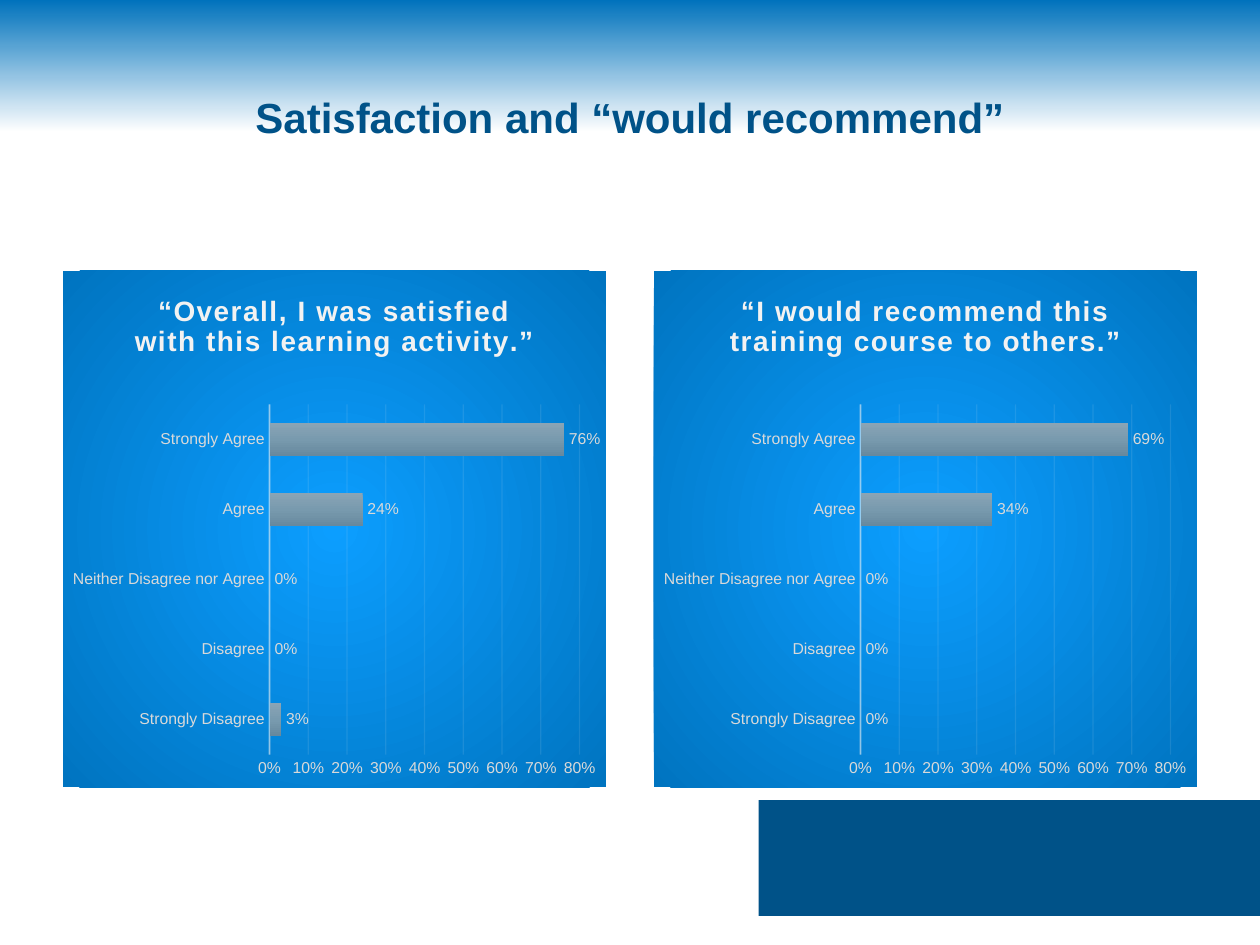
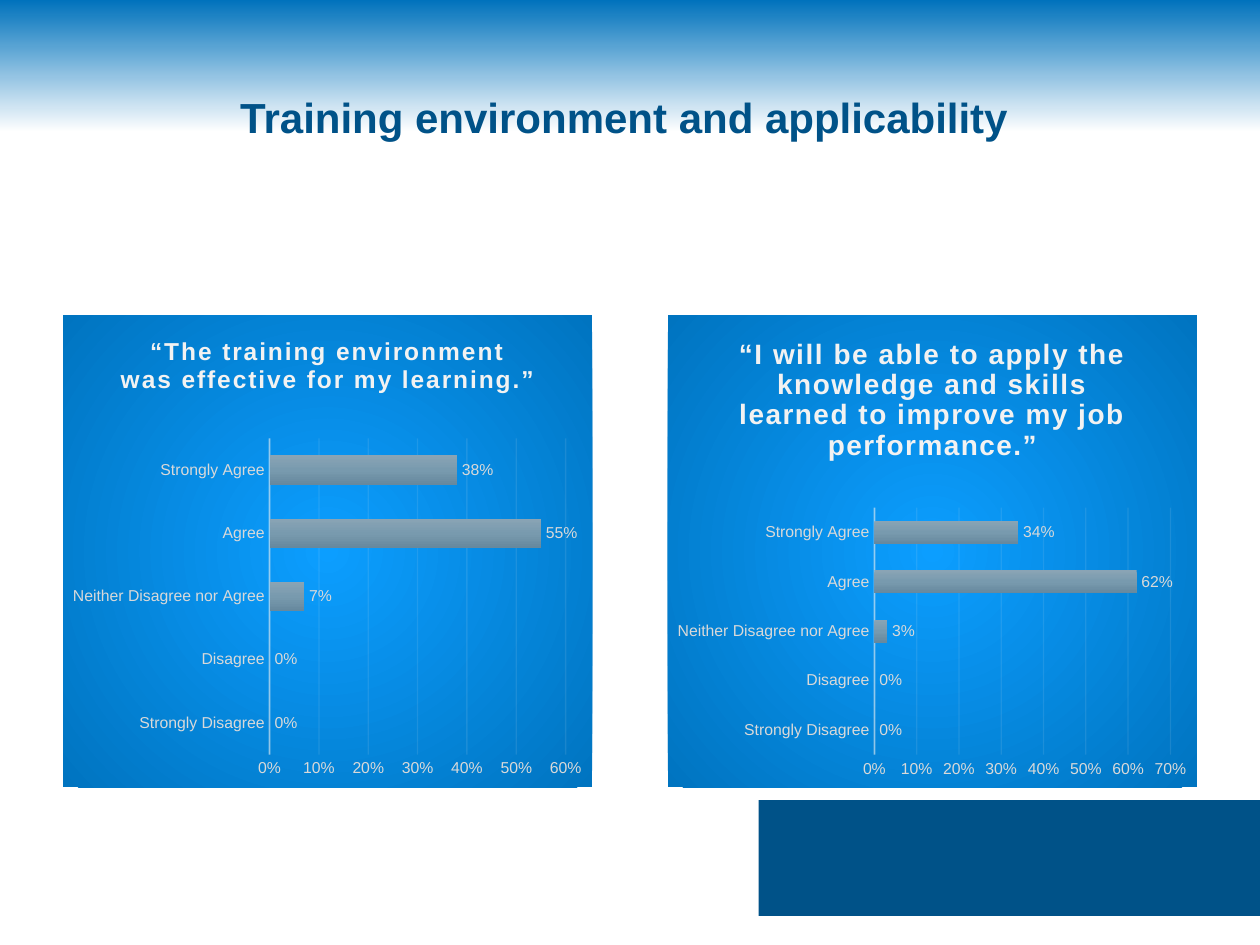
import pptx
import pptx.chart.data
import pptx.dml.color
import pptx.enum.chart
import pptx.enum.shapes
import pptx.enum.text
import pptx.oxml
import pptx.oxml.ns
import pptx.util

Inches = pptx.util.Inches
Pt = pptx.util.Pt
qn = pptx.oxml.ns.qn

COLORS = {
    "navy": "005288",
    "sky": "0072BC",
    "white": "FFFFFF",
    "label": "D9D9D9",
    "light": "F2F2F2",
    "panel_in": "0C9EFF",
    "panel_out": "0074C0",
    "bar_top": "8AA4B5",
    "bar_mid": "789AAE",
    "bar_end": "67899E",
}
FONT = "Arial"
ANSWERS = ["Strongly Disagree", "Disagree", "Neither Disagree nor Agree", "Agree", "Strongly Agree"]
MARGIN = 0.5
PLOT_LEFT, PLOT_RIGHT, PLOT_BOTTOM = 1.64, 0.21, 0.26
DOWN = '<a:lin ang="5400000" scaled="0"/>'
CENTER = '<a:path path="circle"><a:fillToRect l="50000" t="50000" r="50000" b="50000"/></a:path>'

SLIDES = [
    {
        "title": "Satisfaction and “would recommend”",
        "top": 2.15, "width": 4.31, "height": 4.1,
        "charts": [
            ("“Overall, I was satisfied with this learning activity.”", 16, 1.06, 0.8, [0.03, 0, 0, 0.24, 0.76]),
            ("“I would recommend this training course to others.”", 16, 1.06, 0.8, [0, 0, 0, 0.34, 0.69]),
        ],
    },
    {
        "title": "Training environment and applicability ",
        "top": 2.5, "width": 4.2, "height": 3.75,
        "charts": [
            ("“The training environment was effective for my learning.”", 14, 0.98, 0.6, [0, 0, 0.07, 0.55, 0.38]),
            ("“I will be able to apply the knowledge and skills learned to improve my job performance.”",
             16, 1.53, 0.7, [0, 0, 0.03, 0.62, 0.34]),
        ],
    },
]


def rgb(name):
    return pptx.dml.color.RGBColor.from_string(COLORS[name])


def gradient(stops, direction):
    gs = "".join(
        f'<a:gs pos="{pos * 1000}"><a:srgbClr val="{COLORS[name]}"/></a:gs>' for pos, name in stops
    )
    ns = pptx.oxml.ns.nsdecls("a")
    return pptx.oxml.parse_xml(
        f'<a:gradFill {ns} rotWithShape="1"><a:gsLst>{gs}</a:gsLst>{direction}</a:gradFill>'
    )


class Deck:
    def __init__(self):
        self.prs = pptx.Presentation()
        self.prs.slide_width = Inches(10)
        self.prs.slide_height = Inches(7.5)
        self.s = None

    def slide(self, title):
        self.s = self.prs.slides.add_slide(self.prs.slide_layouts[6])
        self.s.background.fill.solid()
        bg = self.s._element.cSld.find(".//" + qn("p:bgPr"))
        bg.replace(bg[0], gradient([(0, "sky"), (14, "white")], DOWN))
        self.band(6.02, 6.35, 3.98, 0.92)
        self.title(title)

    def band(self, x, y, w, h):
        sp = self.s.shapes.add_shape(
            pptx.enum.shapes.MSO_SHAPE.RECTANGLE, Inches(x), Inches(y), Inches(w), Inches(h)
        )
        sp.shadow.inherit = False
        sp.fill.solid()
        sp.fill.fore_color.rgb = rgb("navy")
        sp.line.fill.background()

    def title(self, text):
        sp = self.s.shapes.add_textbox(Inches(MARGIN), Inches(0.3), Inches(9), Inches(1.25))
        tf = sp.text_frame
        tf.word_wrap = True
        tf.vertical_anchor = pptx.enum.text.MSO_ANCHOR.MIDDLE
        p = tf.paragraphs[0]
        p.text = text
        p.alignment = pptx.enum.text.PP_ALIGN.CENTER
        self.font(p.font, 24, "navy", True)

    def font(self, font, size, color, bold=False):
        font.name = FONT
        font.size = Pt(size)
        font.bold = bold
        font.color.rgb = rgb(color)

    def line(self, line, width, alpha):
        line.color.rgb = rgb("light")
        line.width = Pt(width)
        clr = line._get_or_add_ln().find(".//" + qn("a:srgbClr"))
        clr.append(pptx.oxml.parse_xml(
            f'<a:alpha {pptx.oxml.ns.nsdecls("a")} val="{alpha * 1000}"/>'
        ))

    def chart(self, x, y, w, h, title, title_size, plot_top, maximum, values):
        data = pptx.chart.data.CategoryChartData(number_format="0%")
        data.categories = ANSWERS
        data.add_series("Series 1", values)
        chart = self.s.shapes.add_chart(
            pptx.enum.chart.XL_CHART_TYPE.BAR_CLUSTERED,
            Inches(x), Inches(y), Inches(w), Inches(h), data,
        ).chart
        self.font(chart.font, 10, "navy")
        chart.has_legend = False
        self.chart_title(chart, title, title_size)
        self.panel(chart)
        self.plot_area(chart, w, h, plot_top)
        self.axes(chart, maximum)
        self.bars(chart.plots[0])

    def chart_title(self, chart, text, size):
        chart.has_title = True
        chart.chart_title.include_in_layout = False
        p = chart.chart_title.text_frame.paragraphs[0]
        r = p.add_run()
        r.text = text
        self.font(r.font, size, "light", True)
        r._r.get_or_add_rPr().set("spc", "100")

    def panel(self, chart):
        sp_pr = pptx.oxml.parse_xml(
            f'<c:spPr {pptx.oxml.ns.nsdecls("c", "a")}><a:ln><a:noFill/></a:ln></c:spPr>'
        )
        sp_pr.insert(0, gradient([(0, "panel_in"), (100, "panel_out")], CENTER))
        chart._chartSpace.find(qn("c:chart")).addnext(sp_pr)

    def plot_area(self, chart, w, h, top):
        area = chart._chartSpace.find(".//" + qn("c:plotArea"))
        for old in area.findall(qn("c:layout")):
            area.remove(old)
        box = {
            "x": PLOT_LEFT / w,
            "y": top / h,
            "w": (w - PLOT_LEFT - PLOT_RIGHT) / w,
            "h": (h - top - PLOT_BOTTOM) / h,
        }
        sizes = "".join(f'<c:{key} val="{val:.4f}"/>' for key, val in box.items())
        area.insert(0, pptx.oxml.parse_xml(
            f'<c:layout {pptx.oxml.ns.nsdecls("c")}><c:manualLayout><c:layoutTarget val="inner"/>'
            f'<c:xMode val="edge"/><c:yMode val="edge"/>{sizes}</c:manualLayout></c:layout>'
        ))

    def axes(self, chart, maximum):
        cat, val = chart.category_axis, chart.value_axis
        for axis in (cat, val):
            axis.major_tick_mark = pptx.enum.chart.XL_TICK_MARK.NONE
            axis.minor_tick_mark = pptx.enum.chart.XL_TICK_MARK.NONE
            self.font(axis.tick_labels.font, 9, "label")
        self.line(cat.format.line, 1, 54)
        val.minimum_scale = 0
        val.maximum_scale = maximum
        val.major_unit = 0.1
        val.tick_labels.number_format = "0%"
        val.tick_labels.number_format_is_linked = False
        val.format.line.fill.background()
        val.has_major_gridlines = True
        self.line(val.major_gridlines.format.line, 0.75, 10)

    def bars(self, plot):
        plot.gap_width = 115
        plot.overlap = -20
        plot.vary_by_categories = False
        series = plot.series[0]
        series._element.get_or_add_spPr().insert(
            0, gradient([(0, "bar_top"), (50, "bar_mid"), (100, "bar_end")], DOWN)
        )
        labels = series.data_labels
        labels.show_value = True
        labels.position = pptx.enum.chart.XL_LABEL_POSITION.OUTSIDE_END
        labels.number_format = "0%"
        labels.number_format_is_linked = False
        self.font(labels.font, 9, "label")


def main():
    deck = Deck()
    for page in SLIDES:
        deck.slide(page["title"])
        w, h = page["width"], page["height"]
        for x, chart in zip((MARGIN, 10 - MARGIN - w), page["charts"]):
            deck.chart(x, page["top"], w, h, *chart)
    deck.prs.save("out.pptx")


if __name__ == "__main__":
    main()
